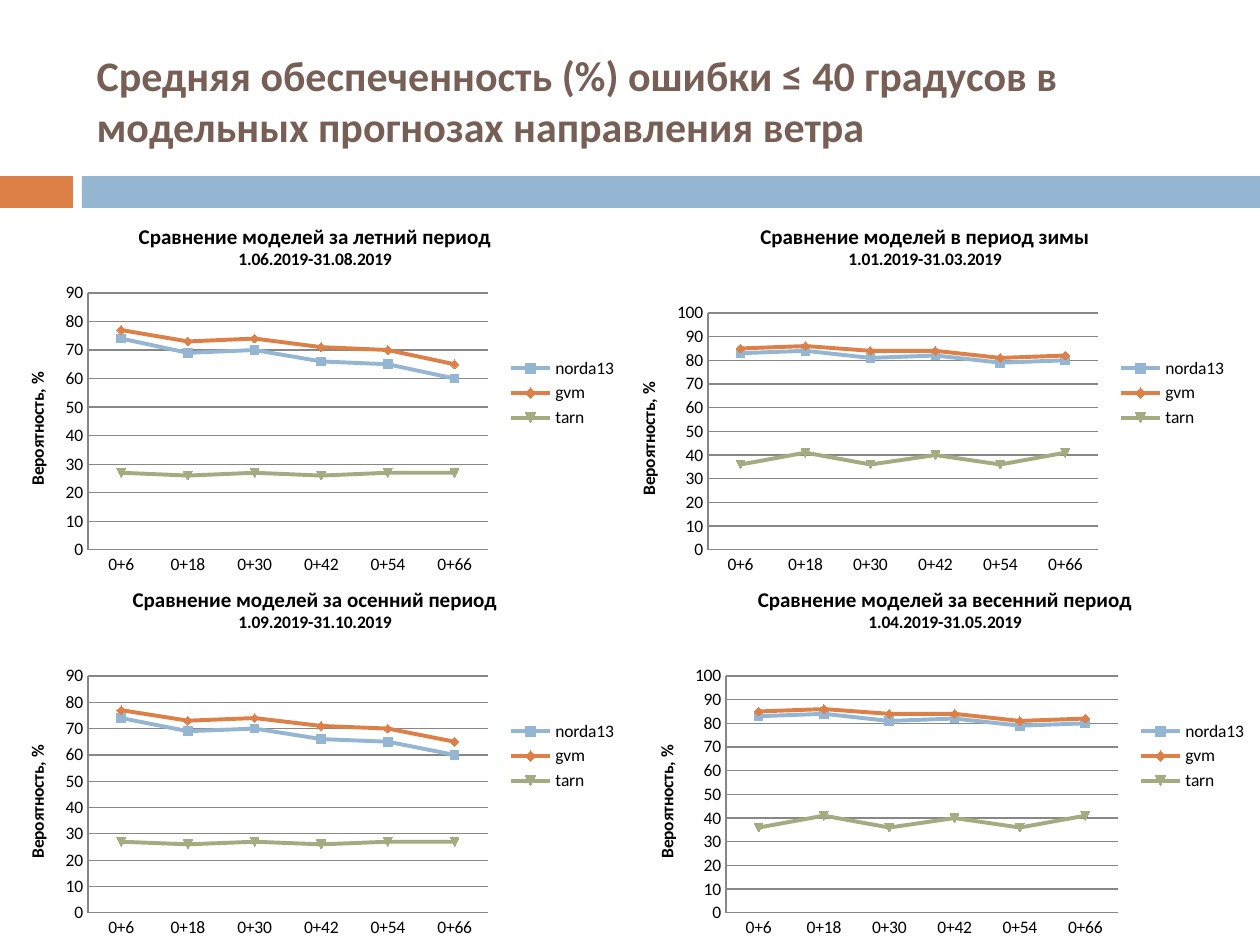
from dataclasses import dataclass

from lxml.etree import SubElement
from pptx import Presentation
from pptx.chart.data import CategoryChartData
from pptx.dml.color import RGBColor
from pptx.enum.chart import XL_CHART_TYPE, XL_LEGEND_POSITION, XL_TICK_MARK
from pptx.enum.shapes import MSO_SHAPE
from pptx.enum.text import MSO_ANCHOR, PP_ALIGN
from pptx.oxml.ns import qn
from pptx.util import Emu, Pt

FONT = "Calibri"
COLORS = {
    "title": "775F55", "text": "000000", "grid": "878787",
    "orange": "DD8047", "blue": "94B6D2", "green": "A5AB81",
}
SERIES_COLORS = {"norda13": "blue", "gvm": "orange", "tarn": "green"}
HOURS = ["0+6", "0+18", "0+30", "0+42", "0+54", "0+66"]
WARM = {
    "norda13": [74, 69, 70, 66, 65, 60],
    "gvm": [77, 73, 74, 71, 70, 65],
    "tarn": [27, 26, 27, 26, 27, 27],
}
COLD = {
    "norda13": [83, 84, 81, 82, 79, 80],
    "gvm": [85, 86, 84, 84, 81, 82],
    "tarn": [36, 41, 36, 40, 36, 41],
}


@dataclass(frozen=True)
class Box:
    x: int
    y: int
    w: int
    h: int


@dataclass(frozen=True)
class Season:
    title: str
    dates: str
    values: dict[str, list[int]]
    top: int  # upper end of the value axis
    box: Box
    plot: Box  # relative to the chart


SEASONS = [
    Season("Сравнение моделей за летний период", "1.06.2019-31.08.2019",
           WARM, 90, Box(0, 204, 630, 378), Box(88, 89, 400, 257)),
    Season("Сравнение моделей в период зимы", "1.01.2019-31.03.2019",
           COLD, 100, Box(610, 204, 630, 378), Box(98, 109, 390, 237)),
    Season("Сравнение моделей за осенний период", "1.09.2019-31.10.2019",
           WARM, 90, Box(0, 567, 630, 378), Box(88, 109, 400, 237)),
    Season("Сравнение моделей за весенний период", "1.04.2019-31.05.2019",
           COLD, 100, Box(630, 567, 630, 378), Box(96, 109, 392, 237)),
]


def px(n: int) -> Emu:
    return Emu(round(n * 914400 / 126))


def rgb(name: str) -> RGBColor:
    return RGBColor.from_string(COLORS[name])


def place(box: Box) -> tuple[Emu, Emu, Emu, Emu]:
    return px(box.x), px(box.y), px(box.w), px(box.h)


def write(p, text: str, size: int, color: str = "text", bold: bool = True) -> None:
    r = p.add_run()
    r.text = text
    r.font.name = FONT
    r.font.size = Pt(size)
    r.font.bold = bold
    r.font.color.rgb = rgb(color)


def add_bar(s, box: Box, color: str) -> None:
    sp = s.shapes.add_shape(MSO_SHAPE.RECTANGLE, *place(box))
    sp.shadow.inherit = False
    sp.fill.solid()
    sp.fill.fore_color.rgb = rgb(color)
    sp.line.fill.background()


def set_plot_layout(chart, box: Box, plot: Box) -> None:
    """Fix the inner plot area as fractions of the chart."""
    area = chart._chartSpace.chart.plotArea
    for old in area.findall(qn("c:layout")):
        area.remove(old)
    layout = SubElement(area, qn("c:layout"))
    area.insert(0, layout)
    manual = SubElement(layout, qn("c:manualLayout"))
    settings = {
        "layoutTarget": "inner", "xMode": "edge", "yMode": "edge",
        "x": plot.x / box.w, "y": plot.y / box.h,
        "w": plot.w / box.w, "h": plot.h / box.h,
    }
    for tag, val in settings.items():
        SubElement(manual, qn(f"c:{tag}")).set("val", str(val))


def format_axes(chart, top: int) -> None:
    value, category = chart.value_axis, chart.category_axis
    for axis in (value, category):
        axis.major_tick_mark = axis.minor_tick_mark = XL_TICK_MARK.NONE
        axis.format.line.color.rgb = rgb("grid")
        axis.format.line.width = Pt(0.75)
    value.minimum_scale, value.maximum_scale, value.major_unit = 0, top, 10
    value.has_major_gridlines = True
    value.major_gridlines.format.line.color.rgb = rgb("grid")
    value.major_gridlines.format.line.width = Pt(0.75)
    tf = value.axis_title.text_frame
    write(tf.paragraphs[0], "Вероятность, %", 10)
    body = tf._txBody.bodyPr
    body.set("rot", "-5400000")
    body.set("vert", "horz")


def add_season_chart(s, season: Season) -> None:
    data = CategoryChartData(number_format="0")
    data.categories = HOURS
    for name, values in season.values.items():
        data.add_series(name, values)
    chart = s.shapes.add_chart(
        XL_CHART_TYPE.LINE_MARKERS, *place(season.box), data).chart
    chart.font.name = FONT
    chart.font.size = Pt(10)
    chart.font.color.rgb = rgb("text")

    # Heading with the dates below it
    tf = chart.chart_title.text_frame
    write(tf.paragraphs[0], season.title, 12)
    write(tf.add_paragraph(), season.dates, 10)
    chart.chart_title.include_in_layout = False

    chart.has_legend = True
    chart.legend.position = XL_LEGEND_POSITION.RIGHT
    chart.legend.include_in_layout = False
    format_axes(chart, season.top)
    set_plot_layout(chart, season.box, season.plot)

    chart.plots[0].vary_by_categories = False
    for series in chart.plots[0].series:
        color = rgb(SERIES_COLORS[series.name])
        series.smooth = False
        series.format.line.color.rgb = color
        series.format.line.width = Pt(2.25)
        series.marker.size = 5
        series.marker.format.fill.solid()
        series.marker.format.fill.fore_color.rgb = color
        series.marker.format.line.color.rgb = color


def main() -> None:
    prs = Presentation()
    prs.slide_width, prs.slide_height = px(1260), px(945)
    s = prs.slides.add_slide(prs.slide_layouts[5])

    # Band under the title
    add_bar(s, Box(0, 176, 73, 32), "orange")
    add_bar(s, Box(82, 176, 1178, 32), "blue")

    # Title
    title = s.shapes.title
    title.left, title.top, title.width, title.height = place(Box(84, 32, 1124, 136))
    tf = title.text_frame
    tf.word_wrap = True
    tf.vertical_anchor = MSO_ANCHOR.MIDDLE
    p = tf.paragraphs[0]
    p.alignment = PP_ALIGN.LEFT
    write(p, "Средняя обеспеченность (%) ошибки ≤ 40 градусов в модельных "
             "прогнозах направления ветра", 24, "title")

    # One chart per season
    for season in SEASONS:
        add_season_chart(s, season)

    prs.save("out.pptx")


if __name__ == "__main__":
    main()
